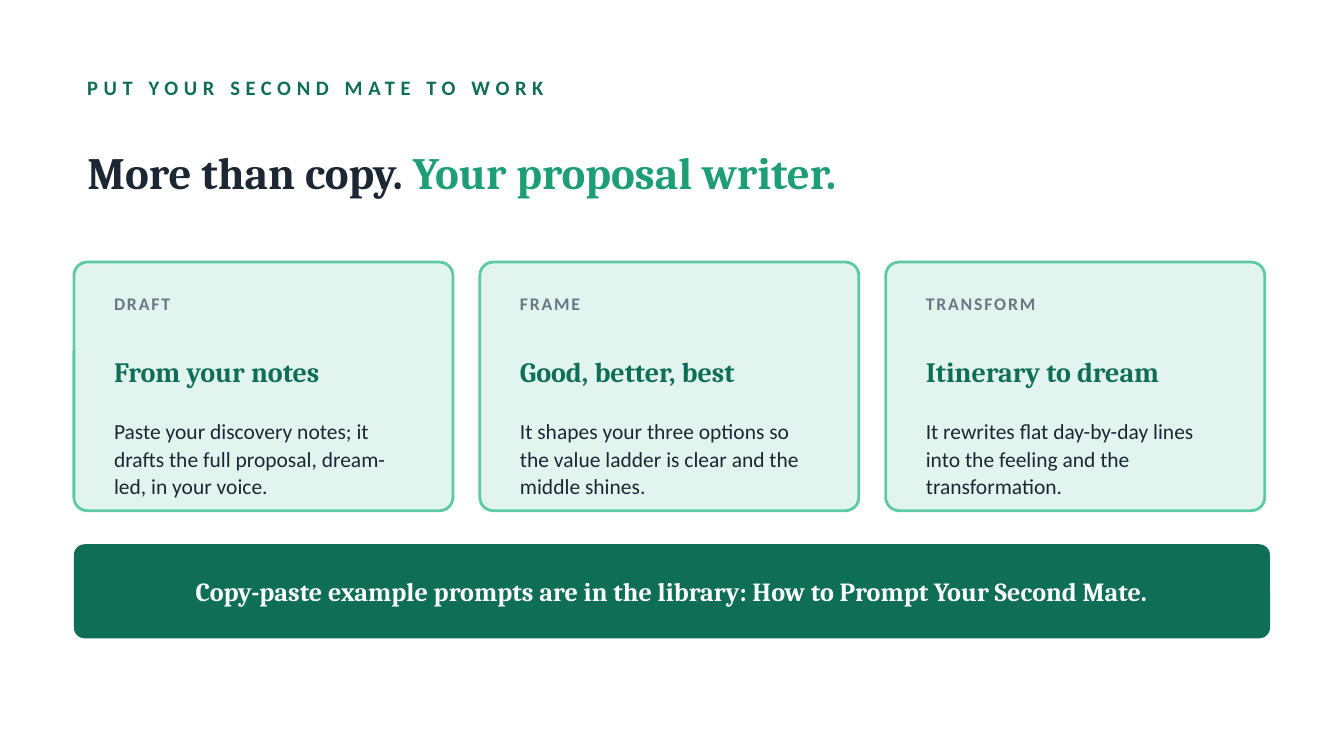
from dataclasses import dataclass

from pptx import Presentation
from pptx.dml.color import RGBColor
from pptx.enum.shapes import MSO_SHAPE as Shape
from pptx.enum.text import MSO_ANCHOR as Anchor, MSO_AUTO_SIZE as Fit, PP_ALIGN as Align
from pptx.util import Inches, Pt


@dataclass(frozen=True)
class Theme:
    ink: str = "1C2733"
    grey: str = "6B7785"
    deep: str = "0F6E56"
    green: str = "1D9E75"
    edge: str = "5DCAA5"
    mint: str = "E1F5EE"
    white: str = "FFFFFF"
    head: str = "Cambria"
    body: str = "Calibri"
    title: float = 24
    name: float = 15
    note: float = 14
    text: float = 11.5
    kicker: float = 11
    label: float = 9.5


T = Theme()
WIDE = 10
HIGH = WIDE * 9 / 16
CARDS = [
    ("DRAFT", "From your notes",
     "Paste your discovery notes; it drafts the full proposal, dream-led, in your voice."),
    ("FRAME", "Good, better, best",
     "It shapes your three options so the value ladder is clear and the middle shines."),
    ("TRANSFORM", "Itinerary to dream",
     "It rewrites flat day-by-day lines into the feeling and the transformation."),
]


def rgb(code):
    return RGBColor.from_string(code)


def inch(box):
    return [Inches(n) for n in box]


def write(shape, runs, size, face, bold=True, align=Align.LEFT, track=0, lead=None):
    """Fill a shape with one paragraph of (text, colour) runs; track is in points."""
    frame = shape.text_frame
    frame.word_wrap = True
    frame.auto_size = Fit.NONE
    frame.vertical_anchor = Anchor.MIDDLE
    para = frame.paragraphs[0]
    para.alignment = align
    if lead:
        para.line_spacing = lead
    font = para.font
    font.size, font.name, font.bold = Pt(size), face, bold
    for text, color in runs:
        run = para.add_run()
        run.text = text
        run.font.color.rgb = rgb(color)
        if track:
            run._r.get_or_add_rPr().set("spc", str(track * 100))


def label(slide, box, text, color, size, face, **style):
    write(slide.shapes.add_textbox(*inch(box)), [(text, color)], size, face, **style)


def panel(slide, box, fill, line=None):
    shape = slide.shapes.add_shape(Shape.ROUNDED_RECTANGLE, *inch(box))
    shape.shadow.inherit = False
    shape.adjustments[0] = (0.1 if line else 0.08) / box[3]
    shape.fill.solid()
    shape.fill.fore_color.rgb = rgb(fill)
    if line:
        shape.line.color.rgb = rgb(line)
        shape.line.width = Pt(1.5)
    else:
        shape.line.fill.background()


def header(slide, box):
    x, y, w, h = box
    label(slide, (x, y, w, 0.3), "PUT YOUR SECOND MATE TO WORK",
          T.deep, T.kicker, T.body, track=3)
    title = slide.shapes.title
    title.left, title.top, title.width, title.height = inch((x, y + 0.35, w, h - 0.35))
    write(title, [("More than copy. ", T.ink), ("Your proposal writer.", T.green)],
          T.title, T.head)


def card(slide, box, tag, name, text):
    x, y, w, h = box
    left, wide = x + 0.2, 2.45
    panel(slide, box, T.mint, T.edge)
    label(slide, (left, y + 0.16, wide, 0.3), tag, T.grey, T.label, T.body, track=1)
    label(slide, (left, y + 0.46, wide, 0.7), name, T.deep, T.name, T.head)
    label(slide, (left, y + 1.18, wide, 0.55), text, T.ink, T.text, T.body,
          bold=False, lead=1.08)


def cards(slide, box, gap=0.2):
    x, y, w, h = box
    wide = (w - gap * (len(CARDS) - 1)) / len(CARDS)
    for i, words in enumerate(CARDS):
        card(slide, (x + i * (wide + gap), y, wide, h), *words)


def banner(slide, box):
    x, y, w, h = box
    panel(slide, box, T.deep)
    label(slide, (x + 0.25, y, w - 0.5, h),
          "Copy-paste example prompts are in the library: How to Prompt Your Second Mate.",
          T.white, T.note, T.head, align=Align.CENTER)


def main():
    deck = Presentation()
    deck.slide_width, deck.slide_height = inch((WIDE, HIGH))
    slide = deck.slides.add_slide(deck.slide_layouts[5])
    header(slide, (0.55, 0.5, 8.9, 1.2))
    cards(slide, (0.55, 1.95, 8.86, 1.85))
    banner(slide, (0.55, 4.05, 8.9, 0.7))
    deck.save("out.pptx")


if __name__ == "__main__":
    main()
